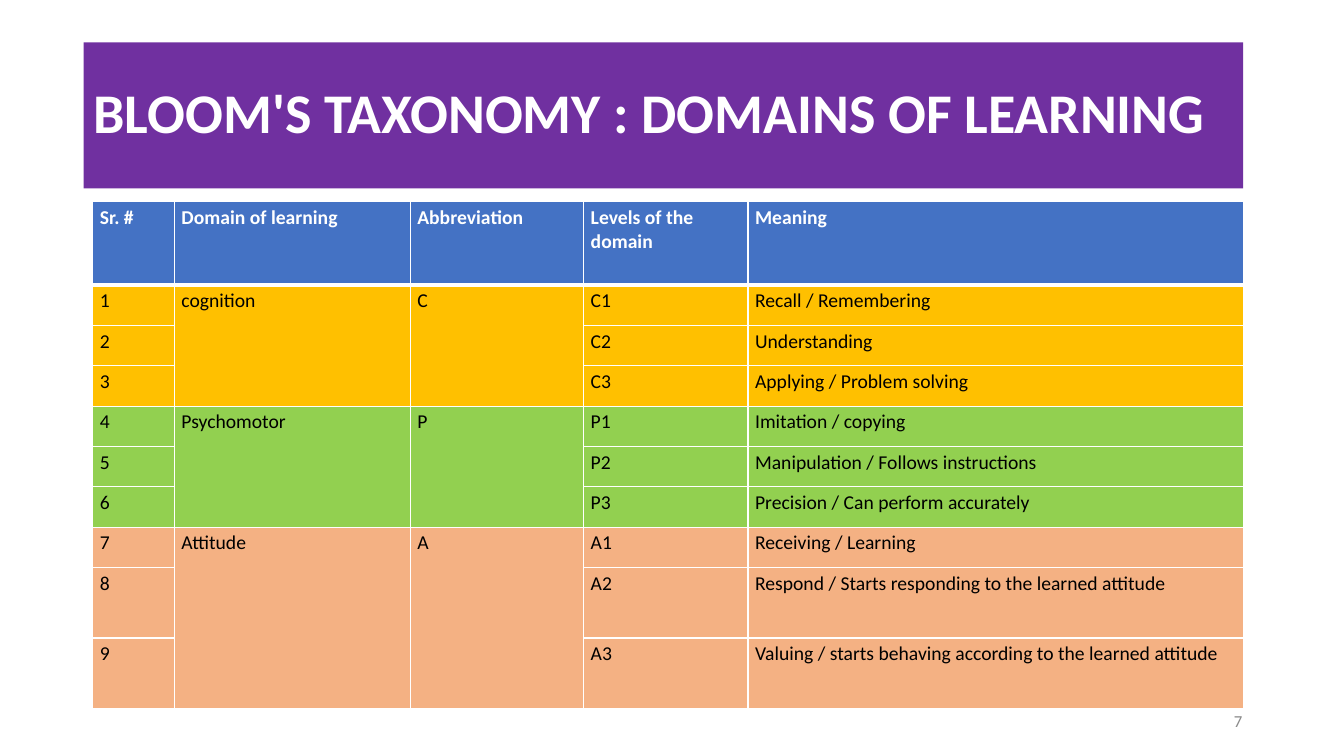
from lxml import etree
from pptx import Presentation
from pptx.dml.color import RGBColor
from pptx.enum.shapes import MSO_SHAPE
from pptx.enum.text import MSO_ANCHOR, PP_ALIGN
from pptx.oxml.ns import qn
from pptx.util import Inches, Pt

RECT = MSO_SHAPE.RECTANGLE
MIDDLE = MSO_ANCHOR.MIDDLE
LEFT, RIGHT = PP_ALIGN.LEFT, PP_ALIGN.RIGHT

COLORS = {
    "white": "FFFFFF", "black": "000000", "grey": "898989", "title": "7030A0",
    "header": "4472C4", "C": "FFC000", "P": "92D050", "A": "F4B183",
}
HEADINGS = ["Sr. #", "Domain of learning", "Abbreviation", "Levels of the domain", "Meaning"]
DOMAINS = [
    ("cognition", "C",
     ["Recall / Remembering", "Understanding", "Applying / Problem solving"]),
    ("Psychomotor", "P",
     ["Imitation / copying", "Manipulation / Follows instructions",
      "Precision / Can perform accurately"]),
    ("Attitude", "A",
     ["Receiving / Learning", "Respond / Starts responding to the learned attitude",
      "Valuing / starts behaving according to the learned attitude"]),
]
COL_WIDTHS = [0.81, 2.34, 1.72, 1.63, 4.92]
ROW_HEIGHTS = [0.83] + [0.4] * 7 + [0.7] * 2


class SlideBuilder:
    """Holds the style and the current slide, and adds elements to it."""

    def __init__(self, slide, font="Calibri"):
        self.slide = slide
        self.font = font

    def color(self, name):
        return RGBColor.from_string(COLORS[name])

    def add_text(self, tf, text, size, color, bold=False, align=LEFT):
        tf.word_wrap = True
        p = tf.paragraphs[0]
        p.alignment = align
        r = p.add_run()
        r.text = text
        r.font.name = self.font
        r.font.size = Pt(size)
        r.font.bold = bold
        r.font.color.rgb = self.color(color)
        return p

    def banner(self, box, text):
        s = self.slide.shapes.add_shape(RECT, *map(Inches, box))
        s.shadow.inherit = False
        s.fill.solid()
        s.fill.fore_color.rgb = self.color("title")
        s.line.fill.background()
        s.text_frame.vertical_anchor = MIDDLE
        p = self.add_text(s.text_frame, text, 40, "white", bold=True)
        p.line_spacing = 0.9

    def label(self, box, text):
        s = self.slide.shapes.add_textbox(*map(Inches, box))
        s.text_frame.vertical_anchor = MIDDLE
        self.add_text(s.text_frame, text, 12, "grey", align=RIGHT)

    def table(self, box, widths, heights):
        shape = self.slide.shapes.add_table(len(heights), len(widths), *map(Inches, box))
        table = shape.table
        for col, width in zip(table.columns, widths):
            col.width = Inches(width)
        for row, height in zip(table.rows, heights):
            row.height = Inches(height)
        return table

    def cell(self, cell, fill, top=1, bottom=1):
        cell.margin_left = cell.margin_right = Inches(0.07)
        cell.margin_top = cell.margin_bottom = Inches(0.04)
        tcPr = cell._tc.get_or_add_tcPr()
        for side, width in (("L", 1), ("R", 1), ("T", top), ("B", bottom)):
            ln = etree.SubElement(tcPr, qn(f"a:ln{side}"), w=str(Pt(width)))
            solid = etree.SubElement(ln, qn("a:solidFill"))
            etree.SubElement(solid, qn("a:srgbClr"), val=COLORS["white"])
        cell.fill.solid()
        cell.fill.fore_color.rgb = self.color(fill)

    def domains_table(self, box):
        table = self.table(box, COL_WIDTHS, ROW_HEIGHTS)
        for col, heading in enumerate(HEADINGS):
            cell = table.cell(0, col)
            self.cell(cell, "header", bottom=3)
            self.add_text(cell.text_frame, heading, 14, "white", bold=True)
        row = 0
        for domain, abbr, meanings in DOMAINS:
            first = row + 1
            for level, meaning in enumerate(meanings, 1):
                row += 1
                names = [domain, abbr] if level == 1 else ["", ""]
                for col, text in enumerate([str(row), *names, f"{abbr}{level}", meaning]):
                    cell = table.cell(row, col)
                    self.cell(cell, abbr, top=3 if row == 1 else 1)
                    if text:
                        self.add_text(cell.text_frame, text, 14, "black")
            for col in (1, 2):
                table.cell(first, col).merge(table.cell(row, col))


def main():
    prs = Presentation()
    prs.slide_width, prs.slide_height = Inches(13.33), Inches(7.5)
    builder = SlideBuilder(prs.slides.add_slide(prs.slide_layouts[6]))
    builder.banner((0.83, 0.42, 11.5, 1.45), "BLOOM'S TAXONOMY : DOMAINS OF LEARNING")
    builder.domains_table((0.92, 2, 11.42, 5))
    builder.label((9.42, 6.95, 3, 0.4), "7")
    prs.save("out.pptx")


if __name__ == "__main__":
    main()
